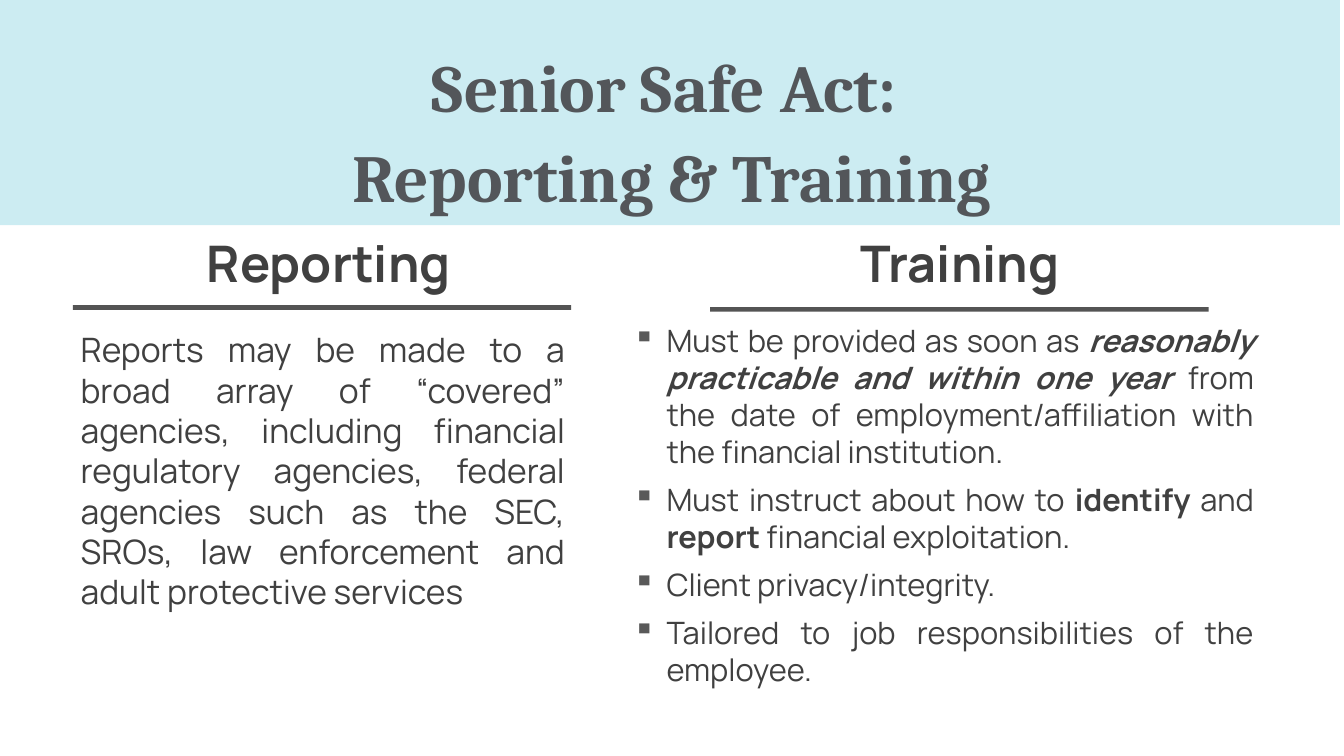
from dataclasses import dataclass
from typing import NamedTuple

from lxml import etree
from pptx import Presentation
from pptx.dml.color import RGBColor
from pptx.enum.shapes import MSO_SHAPE
from pptx.enum.text import MSO_ANCHOR, MSO_AUTO_SIZE, PP_ALIGN
from pptx.oxml.ns import qn
from pptx.util import Pt

RECT = MSO_SHAPE.RECTANGLE
TOP = MSO_ANCHOR.TOP
FIXED = MSO_AUTO_SIZE.NONE
CENTER, JUSTIFY = PP_ALIGN.CENTER, PP_ALIGN.JUSTIFY


@dataclass(frozen=True)
class Theme:
    serif: str = "Cambria"
    sans: str = "Manrope"
    title: str = "53565A"
    text: str = "404040"
    rule: str = "545454"
    band: str = "00A2C0"
    bullet: str = "595959"
    title_size: float = 72
    head_size: float = 54
    body_size: float = 36
    list_size: float = 33


class Box(NamedTuple):
    left: float
    top: float
    width: float
    height: float


class Run(NamedTuple):
    text: str
    bold: bool = False
    italic: bool = False


class Style(NamedTuple):
    font: str
    size: float
    color: str
    align: PP_ALIGN
    space: dict
    bullet: bool = False


class Column(NamedTuple):
    head: str
    head_box: Box
    rule_box: Box
    body: list[list[Run]]
    body_box: Box
    style: Style


THEME = Theme()
TITLE = Style(THEME.serif, THEME.title_size, THEME.title, CENTER, {"line_spacing": Pt(96)})
HEAD = Style(THEME.sans, THEME.head_size, THEME.text, CENTER, {})
BODY = Style(THEME.sans, THEME.body_size, THEME.text, JUSTIFY, {"space_after": Pt(18)})
LIST = Style(THEME.sans, THEME.list_size, THEME.text, JUSTIFY, {"space_before": Pt(12)}, True)

TITLE_BOX = Box(129, 39, 1181.5, 186)
BAND_BOX = Box(-49, -134, 1484.6, 375.2)

# The trailing space shifts the first centred line a little to the left.
TITLE_TEXT = [[Run("Senior Safe Act: ", True)], [Run("Reporting & Training", True)]]

COLUMNS = [
    Column(
        "Reporting", Box(78, 248.4, 548.6, 65.5), Box(78, 327, 534, 5),
        [[Run("Reports may be made to a broad array of “covered” agencies, including "
              "financial regulatory agencies, federal agencies such as the SEC, SROs, "
              "law enforcement and adult protective services")]],
        Box(86.4, 352.8, 519, 305.3), BODY,
    ),
    Column(
        "Training", Box(713.5, 248.4, 630, 65.5), Box(761, 329, 534, 5),
        [
            [Run("Must be provided as soon as "),
             Run("reasonably practicable and within one year ", True, True),
             Run("from the date of employment/affiliation with the financial institution.")],
            [Run("Must instruct about how to "), Run("identify", True), Run(" and "),
             Run("report ", True), Run("financial exploitation.")],
            [Run("Client privacy/integrity.")],
            [Run("Tailored to job responsibilities of the employee.")],
        ],
        Box(678.2, 344.9, 665.3, 436.3), LIST,
    ),
]


def apply(target, values: dict) -> None:
    for name, value in values.items():
        setattr(target, name, value)


def points(box: Box) -> list[Pt]:
    return [Pt(side) for side in box]


def add_bullet(para) -> None:
    """Hang a small square in front of the paragraph."""
    props = para._p.get_or_add_pPr()
    props.set("marL", str(Pt(36)))
    props.set("indent", str(Pt(-54)))
    color = etree.SubElement(props, qn("a:buClr"))
    etree.SubElement(color, qn("a:srgbClr"), val=THEME.bullet)
    etree.SubElement(props, qn("a:buChar"), char="▪")


def fill_text(shape, paras: list[list[Run]], style: Style) -> None:
    frame = shape.text_frame
    apply(frame, {"word_wrap": True, "auto_size": FIXED, "vertical_anchor": TOP,
                  "margin_left": 0, "margin_top": 0, "margin_right": 0, "margin_bottom": 0})
    for index, runs in enumerate(paras):
        para = frame.add_paragraph() if index else frame.paragraphs[0]
        apply(para, {"alignment": style.align, **style.space})
        if style.bullet:
            add_bullet(para)
        for item in runs:
            run = para.add_run()
            run.text = item.text
            apply(run.font, {"name": style.font, "size": Pt(style.size),
                             "bold": item.bold, "italic": item.italic})
            run.font.color.rgb = RGBColor.from_string(style.color)


def add_text(slide, box: Box, paras: list[list[Run]], style: Style) -> None:
    fill_text(slide.shapes.add_textbox(*points(box)), paras, style)


def add_rect(slide, box: Box, color: str, alpha: int = 100) -> None:
    """Draw a plain rectangle; alpha is its opacity in percent."""
    shape = slide.shapes.add_shape(RECT, *points(box))
    shape.shadow.inherit = False
    shape.line.fill.background()
    shape.fill.solid()
    shape.fill.fore_color.rgb = RGBColor.from_string(color)
    if alpha < 100:
        tint = shape._element.spPr.find(qn("a:solidFill"))[0]
        etree.SubElement(tint, qn("a:alpha"), val=str(alpha * 1000))


def add_column(slide, column: Column) -> None:
    add_text(slide, column.head_box, [[Run(column.head, True)]], HEAD)
    add_text(slide, column.body_box, column.body, column.style)
    add_rect(slide, column.rule_box, THEME.rule)


def place_title(slide) -> None:
    """Format the title and bring it in front of the band."""
    title = slide.shapes.title
    apply(title, dict(zip(Box._fields, points(TITLE_BOX))))
    fill_text(title, TITLE_TEXT, TITLE)
    slide.shapes._spTree.append(title._element)


def main() -> None:
    deck = Presentation()
    apply(deck, {"slide_width": Pt(1440), "slide_height": Pt(810)})
    slide = deck.slides.add_slide(deck.slide_layouts.get_by_name("Title Only"))
    for column in COLUMNS:
        add_column(slide, column)
    add_rect(slide, BAND_BOX, THEME.band, 20)
    place_title(slide)
    deck.save("out.pptx")


if __name__ == "__main__":
    main()
